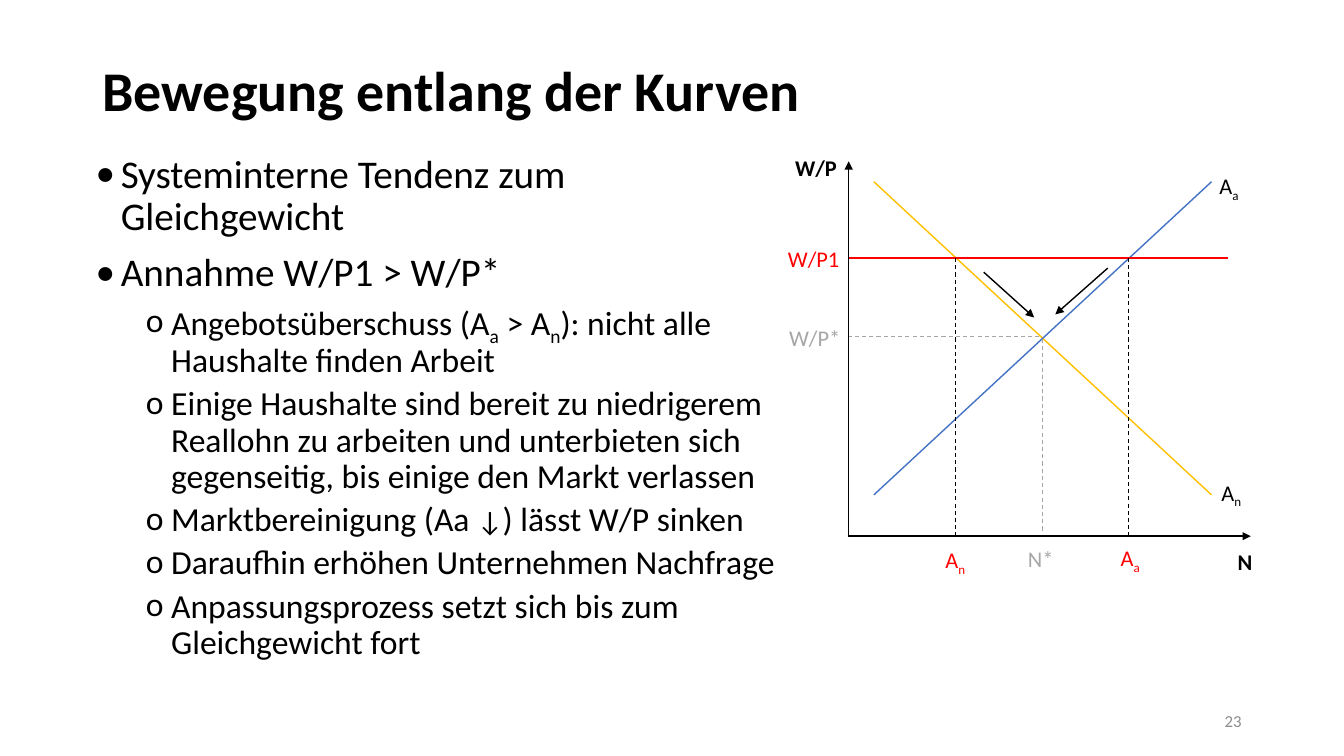
"""Builds a slide on movement along labour supply and demand curves."""
from lxml.etree import SubElement
from pptx import Presentation
from pptx.dml.color import RGBColor
from pptx.enum.dml import MSO_LINE
from pptx.enum.shapes import MSO_CONNECTOR
from pptx.enum.text import MSO_ANCHOR, MSO_AUTO_SIZE, PP_ALIGN
from pptx.oxml.ns import qn
from pptx.util import Pt

COLORS = {"black": "000000", "gray": "A6A6A6", "number": "8C8C8C",
          "red": "FF0000", "gold": "FFC000", "blue": "4472C4"}
FONT = "Calibri"
TITLE = "Bewegung entlang der Kurven"
PAGE_NUMBER = "23"

BULLETS = [
    (0, ["Systeminterne Tendenz zum\nGleichgewicht"]),
    (0, ["Annahme W/P1 > W/P*"]),
    (1, ["Angebotsüberschuss (A", ("a", "sub"), " > A", ("n", "sub"),
         "): nicht alle\nHaushalte finden Arbeit"]),
    (1, ["Einige Haushalte sind bereit zu niedrigerem\n"
         "Reallohn zu arbeiten und unterbieten sich\n"
         "gegenseitig, bis einige den Markt verlassen"]),
    (1, ["Marktbereinigung (Aa ", ("↓", "small"), ") lässt W/P sinken"]),
    (1, ["Daraufhin erhöhen Unternehmen Nachfrage"]),
    (1, ["Anpassungsprozess setzt sich bis zum\nGleichgewicht fort"]),
]
LEVELS = [
    {"indent": 18, "size": 28, "before": 10, "mark": "•"},
    {"indent": 54, "size": 24, "before": 5, "mark": "o"},
]

AXIS_X, AXIS_Y = 606.2, 383
CURVE_LEFT, CURVE_RIGHT = 624.2, 865.4
CURVE_TOP, CURVE_BOTTOM = 129.8, 353.5
WAGE_HIGH, WAGE_BALANCE = 184.3, 240.5
DEMAND_X, BALANCE_X, SUPPLY_X = 682.6, 744.5, 806.4

LINES = [
    ((AXIS_X, AXIS_Y), (AXIS_X, 115.2), "black", "arrow"),
    ((AXIS_X - 0.7, AXIS_Y), (893.5, AXIS_Y), "black", "arrow"),
    ((CURVE_LEFT, CURVE_TOP), (CURVE_RIGHT, CURVE_BOTTOM), "gold", "solid"),
    ((CURVE_LEFT, CURVE_BOTTOM), (CURVE_RIGHT, CURVE_TOP), "blue", "solid"),
    ((BALANCE_X - 2, WAGE_BALANCE), (AXIS_X, WAGE_BALANCE), "gray", "dash"),
    ((BALANCE_X, WAGE_BALANCE + 1.4), (BALANCE_X, 380.9), "gray", "dash"),
    ((AXIS_X, WAGE_HIGH), (877, WAGE_HIGH), "red", "solid"),
    ((DEMAND_X, WAGE_HIGH), (DEMAND_X, AXIS_Y), "black", "dash"),
    ((SUPPLY_X, WAGE_HIGH), (SUPPLY_X, AXIS_Y), "black", "dash"),
    ((791.3, 191.5), (753.8, 224.6), "black", "arrow"),
    ((702.7, 194.4), (738.7, 226.8), "black", "arrow"),
]
LABELS = [
    (864, 119.5, 45.4, ["A", ("a", "sub")], "black", False),
    (865.4, 338.4, 45.4, ["A", ("n", "sub")], "black", False),
    (560.9, 106.6, 45.4, ["W/P"], "black", True),
    (877, 388.1, 45.4, ["N"], "black", True),
    (668.2, 386.6, 45.4, ["A", ("n", "sub")], "red", False),
    (793.4, 385.2, 45.4, ["A", ("a", "sub")], "red", False),
    (727.2, 385.9, 45.4, ["N*"], "gray", False),
    (556.6, 228.2, 55.4, ["W/P*"], "gray", False),
    (555.8, 171.4, 55.4, ["W/P1"], "red", False),
]


def add_spans(para, pieces, size, color="black", bold=False):
    """Adds styled runs, turning newlines into line breaks."""
    for piece in pieces:
        text, style = (piece, "") if isinstance(piece, str) else piece
        for index, part in enumerate(text.split("\n")):
            if index:
                para.add_line_break()
            span = para.add_run()
            span.text = part
            font = span.font
            font.name, font.bold = FONT, bold
            font.size = Pt(20 if style == "small" else size)
            font.color.rgb = RGBColor.from_string(COLORS[color])
            if style == "sub":
                font._element.set("baseline", "-25000")


def add_box(page, left, top, width, height):
    """Adds a wrapping text box and returns its text frame."""
    frame = page.shapes.add_textbox(Pt(left), Pt(top), Pt(width), Pt(height)).text_frame
    frame.word_wrap = True
    return frame


def add_title(page):
    """Places and fills the title placeholder."""
    title = page.shapes.title
    title.left, title.top, title.width, title.height = Pt(66), Pt(14.4), Pt(828), Pt(104.4)
    frame = title.text_frame
    frame.auto_size = MSO_AUTO_SIZE.NONE
    frame.vertical_anchor = MSO_ANCHOR.MIDDLE
    para = frame.paragraphs[0]
    para.alignment, para.line_spacing = PP_ALIGN.LEFT, 0.9
    add_spans(para, [TITLE], 40, bold=True)


def add_bullets(page):
    """Adds the two-level bullet list."""
    frame = add_box(page, 61.2, 106.6, 833, 379.4)
    for index, (depth, pieces) in enumerate(BULLETS):
        level = LEVELS[depth]
        para = frame.add_paragraph() if index else frame.paragraphs[0]
        para.level, para.line_spacing = depth, 0.9
        para.space_before = Pt(level["before"] if index else 0)
        props = para._p.get_or_add_pPr()
        props.set("marL", str(Pt(level["indent"])))
        props.set("indent", str(Pt(-18)))
        SubElement(props, qn("a:buFont"), typeface=FONT)
        SubElement(props, qn("a:buChar"), char=level["mark"])
        add_spans(para, pieces, level["size"])


def add_line(page, start, end, color, style):
    """Adds a solid, dashed or arrow-tipped line."""
    points = [Pt(value) for value in start + end]
    connector = page.shapes.add_connector(MSO_CONNECTOR.STRAIGHT, *points)
    line = connector.line
    line.color.rgb = RGBColor.from_string(COLORS[color])
    line.width = Pt(0.75 if style == "dash" else 1)
    if style == "dash":
        line.dash_style = MSO_LINE.DASH
    if style == "arrow":
        SubElement(line._get_or_add_ln(), qn("a:tailEnd"), type="triangle")
    SubElement(connector._element.spPr, qn("a:effectLst"))


def main():
    """Builds and saves the deck."""
    deck = Presentation()
    deck.slide_width, deck.slide_height = Pt(960), Pt(540)
    page = deck.slides.add_slide(deck.slide_layouts[5])
    add_title(page)
    add_bullets(page)
    number = add_box(page, 678, 500.4, 216, 28.8)
    number.vertical_anchor = MSO_ANCHOR.MIDDLE
    number.paragraphs[0].alignment = PP_ALIGN.RIGHT
    add_spans(number.paragraphs[0], [PAGE_NUMBER], 12, "number")
    for line in LINES:
        add_line(page, *line)
    for left, top, width, pieces, color, bold in LABELS:
        frame = add_box(page, left, top, width, 26.6)
        add_spans(frame.paragraphs[0], pieces, 16, color, bold)
    deck.save("out.pptx")


if __name__ == "__main__":
    main()
